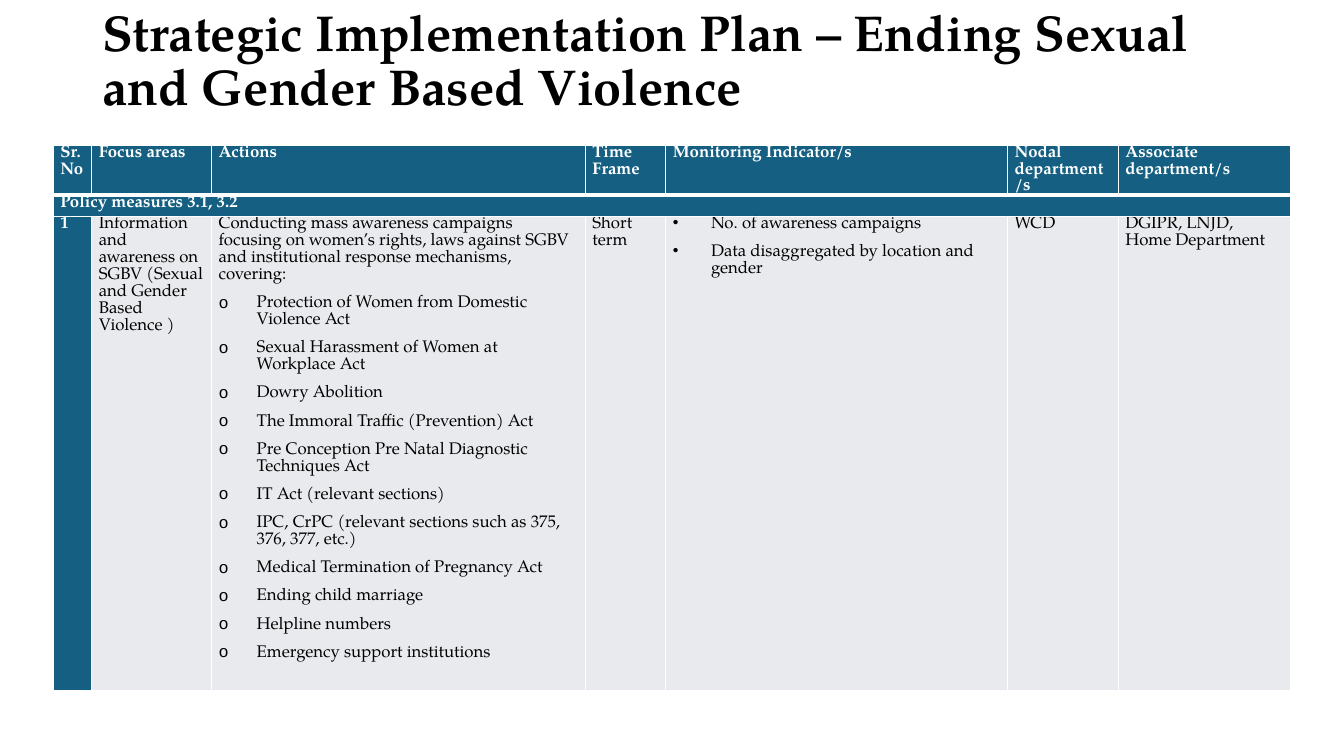
"""Build the strategic implementation plan slide."""
from dataclasses import dataclass

from lxml import etree
from pptx import Presentation
from pptx.dml.color import RGBColor
from pptx.enum import text
from pptx.oxml import ns
from pptx.util import Cm, Pt

TITLE = "Strategic Implementation Plan – Ending Sexual and Gender Based Violence"
HEADS = ["Sr. No", "Focus areas", "Actions", "Time Frame",
         "Monitoring Indicator/s", "Nodal department/s", "Associate department/s"]
BAND = "Policy measures 3.1, 3.2"
INTRO = ("Conducting mass awareness campaigns focusing on women’s rights, laws "
         "against SGBV and institutional response mechanisms, covering:")
ACTS = ["Protection of Women from Domestic Violence Act",
        "Sexual Harassment of Women at Workplace Act",
        "Dowry Abolition",
        "The Immoral Traffic (Prevention) Act",
        "Pre Conception Pre Natal Diagnostic Techniques Act",
        "IT Act (relevant sections)",
        "IPC, CrPC (relevant sections such as 375, 376, 377, etc.)",
        "Medical Termination of Pregnancy Act",
        "Ending child marriage",
        "Helpline numbers",
        "Emergency support institutions"]
SIGNS = ["No. of awareness campaigns", "Data disaggregated by location and gender"]
PLAN = [["1"],
        ["Information and awareness on SGBV (Sexual and Gender Based Violence )"],
        [INTRO] + [("o", act) for act in ACTS],
        ["Short term"],
        [("•", sign) for sign in SIGNS],
        ["WCD"],
        ["DGIPR, LNJD, Home Department"]]
ROWS = [[[head] for head in HEADS], [[BAND]] + [[]] * 6, PLAN]
WIDTHS = [0.97, 3.02, 9.42, 2.03, 8.61, 2.79, 4.34]
HEIGHTS = [1.07, 0.53, 11.96]


@dataclass(frozen=True)
class Theme:
    """Hold the colours, fonts and sizes of the slide."""
    font: str = "TeX Gyre Pagella"
    dark: str = "156082"
    pale: str = "E8EAED"
    white: str = "FFFFFF"
    black: str = "000000"
    title: int = 36
    cell: int = 12
    thin: int = 1
    thick: int = 3


LOOK = Theme()
MARKS = {"o": "Courier New", "•": "Symbol"}


def add_mark(para, mark):
    """Give a paragraph a hanging bullet."""
    props = para._p.get_or_add_pPr()
    props.set("marL", str(Cm(0.96)))
    props.set("indent", str(-Cm(0.96)))
    etree.SubElement(props, ns.qn("a:buFont"), typeface=MARKS[mark])
    etree.SubElement(props, ns.qn("a:buChar"), char=mark)


def write(frame, lines, size=LOOK.cell, color=LOOK.black, bold=False,
          space=1.0, after=8):
    """Fill a text frame with plain or bulleted lines."""
    for num, line in enumerate(lines):
        mark, words = line if isinstance(line, tuple) else (None, line)
        para = frame.add_paragraph() if num else frame.paragraphs[0]
        para.line_spacing = space
        para.space_before, para.space_after = Pt(0), Pt(after)
        if mark:
            add_mark(para, mark)
        run = para.add_run()
        run.text = words
        font = run.font
        font.name, font.size, font.bold = LOOK.font, Pt(size), bold
        font.color.rgb = RGBColor.from_string(color)


def edge(cell, **sides):
    """Draw the borders of a cell with the given point widths."""
    props = cell._tc.get_or_add_tcPr()
    for side in "LRTB":
        line = etree.SubElement(props, ns.qn(f"a:ln{side}"),
                                w=str(Pt(sides.get(side, LOOK.thin))))
        fill = etree.SubElement(line, ns.qn("a:solidFill"))
        etree.SubElement(fill, ns.qn("a:srgbClr"), val=LOOK.white)


def add_title(slide):
    """Place and fill the title."""
    title = slide.shapes.title
    title.left, title.top = Cm(2.33), Cm(0.56)
    title.width, title.height = Cm(29.21), Cm(3.68)
    frame = title.text_frame
    frame.word_wrap = True
    frame.auto_size = text.MSO_AUTO_SIZE.NONE
    frame.vertical_anchor = text.MSO_ANCHOR.MIDDLE
    frame.margin_bottom = Cm(1.79)
    write(frame, [TITLE], size=LOOK.title, bold=True, space=0.9, after=0)
    frame.paragraphs[0].alignment = text.PP_ALIGN.LEFT


def add_plan(slide):
    """Place and fill the plan table."""
    frame = slide.shapes.add_table(len(ROWS), len(WIDTHS), Cm(1.34), Cm(3.67),
                                   Cm(sum(WIDTHS)), Cm(sum(HEIGHTS)))
    table = frame.table
    for col, width in zip(table.columns, WIDTHS):
        col.width = Cm(width)
    for row, height in zip(table.rows, HEIGHTS):
        row.height = Cm(height)
    table.cell(1, 0).merge(table.cell(1, len(WIDTHS) - 1))
    for r, row in enumerate(ROWS):
        for c, lines in enumerate(row):
            cell = table.cell(r, c)
            dark = r < 2 or c == 0
            edge(cell, T=LOOK.thick if r == 1 else LOOK.thin,
                 B=LOOK.thick if r == 0 else LOOK.thin)
            cell.fill.solid()
            cell.fill.fore_color.rgb = RGBColor.from_string(
                LOOK.dark if dark else LOOK.pale)
            cell.margin_left = cell.margin_right = Cm(0.18)
            cell.margin_top = cell.margin_bottom = 0
            write(cell.text_frame, lines, bold=dark,
                  color=LOOK.white if dark else LOOK.black)


def main():
    """Build and save the deck."""
    deck = Presentation()
    deck.slide_width, deck.slide_height = Cm(33.87), Cm(19.05)
    slide = deck.slides.add_slide(deck.slide_layouts[5])
    add_title(slide)
    add_plan(slide)
    deck.save("out.pptx")


if __name__ == "__main__":
    main()
